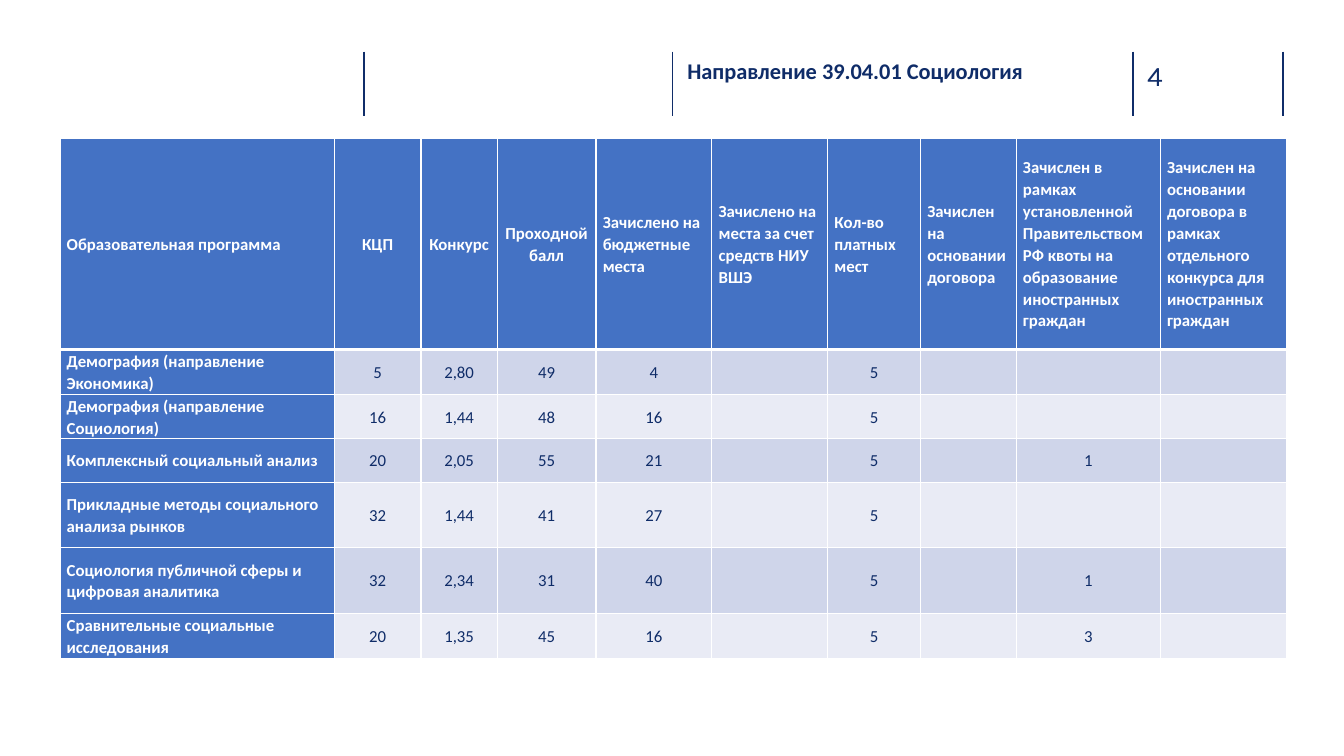
from dataclasses import dataclass

import lxml.etree
import pptx
import pptx.dml.color
import pptx.enum.shapes
import pptx.enum.text
import pptx.oxml.ns
import pptx.util

Cm = pptx.util.Cm
Pt = pptx.util.Pt
RGBColor = pptx.dml.color.RGBColor
Align = pptx.enum.text.PP_ALIGN
qn = pptx.oxml.ns.qn

NAVY = RGBColor(0x0F, 0x2C, 0x68)
RULE_NAVY = RGBColor(0x10, 0x2D, 0x69)
WHITE = RGBColor(0xFF, 0xFF, 0xFF)
HEADER_BLUE = RGBColor(0x44, 0x72, 0xC4)
BAND_DARK = RGBColor(0xCF, 0xD5, 0xEA)
BAND_LIGHT = RGBColor(0xE9, 0xEB, 0xF5)

RULE_POSITIONS = (9.17, 16.94, 28.55, 32.33)
RULE_TOP, RULE_BOTTOM = 1.3, 2.92
HEADER_HEIGHT = 5.33


@dataclass(frozen=True)
class Column:
    heading: str
    width: float
    align: Align = Align.LEFT


@dataclass(frozen=True)
class Programme:
    name: str
    height: float
    places: str
    contest: str
    score: str
    budget: str
    paid: str = "5"
    quota: str = ""

    def values(self) -> tuple[str, ...]:
        return (self.name, self.places, self.contest, self.score, self.budget,
                "", self.paid, "", self.quota, "")


COLUMNS = (
    Column("Образовательная программа", 6.91),
    Column("КЦП", 2.19, Align.CENTER),
    Column("Конкурс", 1.92, Align.CENTER),
    Column("Проходной балл", 2.49, Align.CENTER),
    Column("Зачислено на бюджетные места", 2.92),
    Column("Зачислено на места за счет средств НИУ ВШЭ", 2.92),
    Column("Кол-во платных мест", 2.34),
    Column("Зачислен на основании договора", 2.41),
    Column("Зачислен в рамках установленной Правительством РФ квоты "
           "на образование иностранных граждан", 3.63),
    Column("Зачислен на основании договора в рамках отдельного конкурса "
           "для иностранных граждан", 3.18),
)

PROGRAMMES = (
    Programme("Демография (направление Экономика)", 1.14, "5", "2,80", "49", "4"),
    Programme("Демография (направление Социология)", 1.1, "16", "1,44", "48", "16"),
    Programme("Комплексный социальный анализ", 1.1, "20", "2,05", "55", "21", quota="1"),
    Programme("Прикладные методы социального анализа рынков", 1.65, "32", "1,44", "41", "27"),
    Programme("Социология публичной сферы и цифровая аналитика", 1.65, "32", "2,34", "31", "40",
              quota="1"),
    Programme("Сравнительные социальные исследования", 1.14, "20", "1,35", "45", "16", quota="3"),
)


def add_span(para, text: str, size: float, color: RGBColor, bold: bool = False,
             font: str = "Calibri") -> None:
    span = para.add_run()
    span.text = text
    span.font.name = font
    span.font.size = Pt(size)
    span.font.bold = bold
    span.font.color.rgb = color


def clear_insets(box) -> None:
    frame = box.text_frame
    frame.margin_left = frame.margin_right = frame.margin_top = frame.margin_bottom = 0
    frame.vertical_anchor = pptx.enum.text.MSO_ANCHOR.TOP
    frame.auto_size = pptx.enum.text.MSO_AUTO_SIZE.NONE
    frame.word_wrap = True


def add_rule(page, left: float) -> None:
    rule = page.shapes.add_connector(pptx.enum.shapes.MSO_CONNECTOR.STRAIGHT,
                                     Cm(left), Cm(RULE_TOP), Cm(left), Cm(RULE_BOTTOM))
    rule.line.color.rgb = RULE_NAVY
    rule.line.width = Pt(1)
    lxml.etree.SubElement(rule._element.spPr, qn("a:effectLst"))


def add_title(page) -> None:
    box = page.shapes.title
    box.left, box.top, box.width, box.height = Cm(17.32), Cm(1.45), Cm(10.77), Cm(1.14)
    clear_insets(box)
    para = box.text_frame.paragraphs[0]
    para.alignment = Align.LEFT
    para.line_spacing = 1.0
    add_span(para, "Направление 39.04.01 Социология", 16, NAVY, bold=True)


def add_page_number(page) -> None:
    box = page.shapes.add_textbox(Cm(28.91), Cm(1.47), Cm(1.85), Cm(0.86))
    clear_insets(box)
    add_span(box.text_frame.paragraphs[0], "4", 20, RULE_NAVY, font="Karla")


def set_borders(cell, top: float, bottom: float) -> None:
    properties = cell._tc.get_or_add_tcPr()
    for side, width in (("L", 1), ("R", 1), ("T", top), ("B", bottom)):
        border = lxml.etree.SubElement(properties, qn(f"a:ln{side}"), w=str(Pt(width)))
        fill = lxml.etree.SubElement(border, qn("a:solidFill"))
        lxml.etree.SubElement(fill, qn("a:srgbClr"), val=str(WHITE))


def fill_cell(cell, text: str, fill: RGBColor, align: Align, row: int) -> None:
    set_borders(cell, top=3 if row == 1 else 1, bottom=3 if row == 0 else 1)
    cell.fill.solid()
    cell.fill.fore_color.rgb = fill
    cell.margin_left = cell.margin_right = Cm(0.17)
    cell.margin_top = cell.margin_bottom = 0
    cell.vertical_anchor = pptx.enum.text.MSO_ANCHOR.MIDDLE
    if text:
        para = cell.text_frame.paragraphs[0]
        para.alignment = align
        para.line_spacing = 1.07
        strong = fill == HEADER_BLUE
        add_span(para, text, 12, WHITE if strong else NAVY, bold=strong)


def add_admission_table(page) -> None:
    heights = [HEADER_HEIGHT] + [programme.height for programme in PROGRAMMES]
    width = sum(column.width for column in COLUMNS)
    table = page.shapes.add_table(len(heights), len(COLUMNS), Cm(1.51), Cm(3.48),
                                  Cm(width), Cm(sum(heights))).table
    for row, height in zip(table.rows, heights):
        row.height = Cm(height)
    for index, column in enumerate(COLUMNS):
        table.columns[index].width = Cm(column.width)
        fill_cell(table.cell(0, index), column.heading, HEADER_BLUE, column.align, 0)
    for row, programme in enumerate(PROGRAMMES, start=1):
        band = BAND_DARK if row % 2 else BAND_LIGHT
        for index, value in enumerate(programme.values()):
            fill = band if index else HEADER_BLUE
            align = Align.CENTER if index else Align.LEFT
            fill_cell(table.cell(row, index), value, fill, align, row)


def main() -> None:
    deck = pptx.Presentation()
    deck.slide_width, deck.slide_height = Cm(33.87), Cm(19.05)
    page = deck.slides.add_slide(deck.slide_layouts.get_by_name("Title Only"))
    for left in RULE_POSITIONS:
        add_rule(page, left)
    add_title(page)
    add_page_number(page)
    add_admission_table(page)
    deck.save("out.pptx")


if __name__ == "__main__":
    main()
